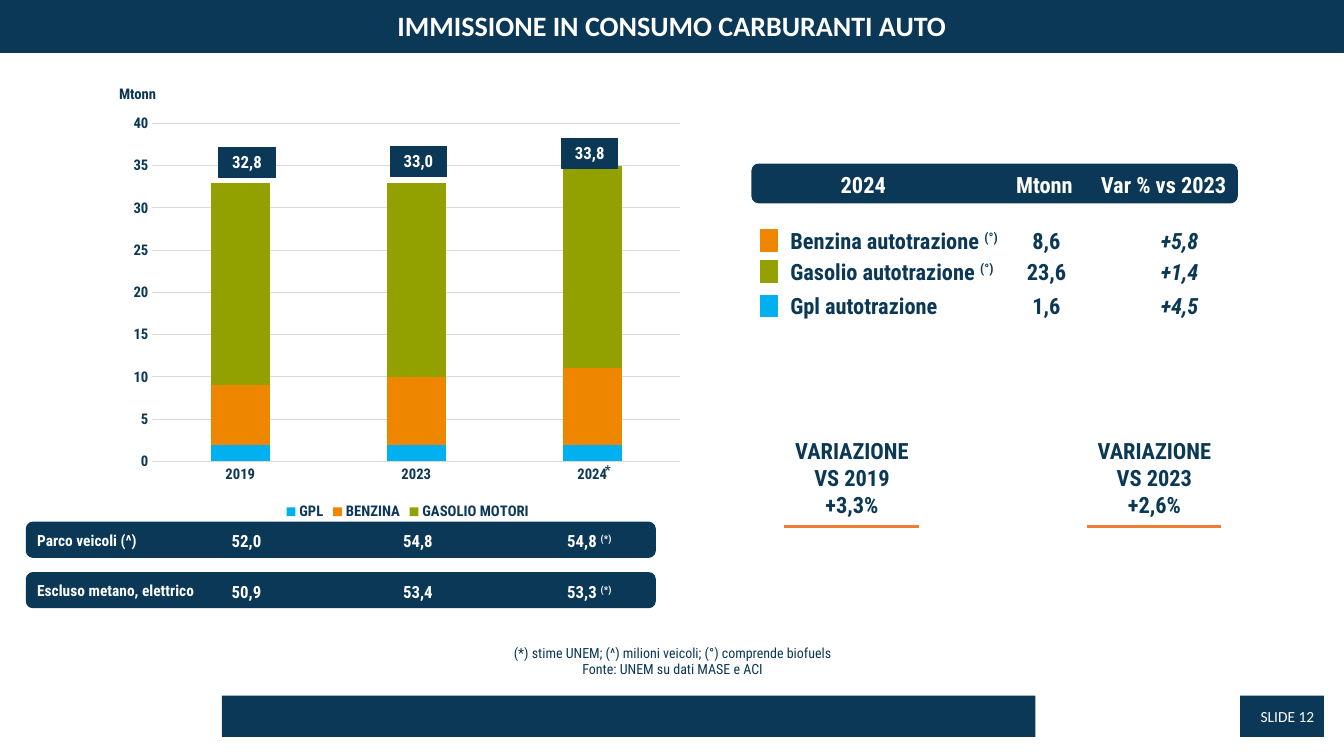
from lxml import etree
from pptx import Presentation
from pptx.chart.data import CategoryChartData
from pptx.dml.color import RGBColor
from pptx.enum.chart import XL_CHART_TYPE as ChartType, XL_LEGEND_POSITION as LegendPosition
from pptx.enum.chart import XL_TICK_MARK as TickMark
from pptx.enum.shapes import MSO_CONNECTOR as Connector, MSO_SHAPE as Shape
from pptx.enum.text import MSO_ANCHOR as Anchor, PP_ALIGN as Align
from pptx.oxml import parse_xml
from pptx.oxml.ns import nsdecls, qn
from pptx.util import Inches, Pt

NAVY, WHITE, GRID, ACCENT = "0B3856", "FFFFFF", "D9D9D9", "ED7D31"
BLUE, ORANGE, GREEN = "00B0F0", "EF8600", "92A000"
BODY, PLAIN = "Roboto Condensed", "Calibri"

TITLE = "IMMISSIONE IN CONSUMO CARBURANTI AUTO"
YEARS = ["2019", "2023", "2024"]
SERIES = [
    ("GPL", BLUE, (2, 2, 2)),
    ("BENZINA", ORANGE, (7, 8, 9)),
    ("GASOLIO MOTORI", GREEN, (24, 23, 24)),
]
TOTALS = [("32,8", 1.46), ("33,0", 1.45), ("33,8", 1.37)]
VEHICLES = [
    ("Parco veicoli (^)", [("52,0", ""), ("54,8", ""), ("54,8 ", "(*)")]),
    ("Escluso metano, elettrico", [("50,9", ""), ("53,4", ""), ("53,3 ", "(*)")]),
]
HEADINGS = [("2024", 8.24, 0.66), ("Mtonn", 9.98, 0.79), ("Var % vs 2023", 10.82, 1.45)]
FUELS = [
    ("Benzina autotrazione ", "(°)", 2.46, "8,6", "+5,8", ORANGE, 2.2),
    ("Gasolio autotrazione ", "(°)", 2.4, "23,6", "+1,4", GREEN, 2.51),
    ("Gpl autotrazione", "", 1.73, "1,6", "+4,5", BLUE, 2.85),
]
CHANGES = [("VS 2019", "+3,3%", 7.78), ("VS 2023", "+2,6%", 10.78)]
NOTES = ["(*) stime UNEM; (^) milioni veicoli; (°) comprende biofuels",
         "Fonte: UNEM su dati MASE e ACI"]

COLUMN_CENTRES = [2.45 + 1.7 * index for index in range(len(YEARS))]

deck = Presentation()
deck.slide_width, deck.slide_height = Inches(13.33), Inches(7.5)
page = deck.slides.add_slide(deck.slide_layouts[6])


def colour(value):
    return RGBColor.from_string(value)


def style(font, size, tint, bold=True, italic=False, name=BODY):
    font.size, font.bold, font.italic, font.name = Pt(size), bold, italic, name
    font.color.rgb = colour(tint)


def write(box, lines, size, tint=NAVY, align=Align.CENTER, raised="", wrap=True, **look):
    frame = box.text_frame
    frame.word_wrap = wrap
    frame.text = "\n".join(lines)
    if raised:
        span = frame.paragraphs[-1].add_run()
        span.text = raised
        span._r.get_or_add_rPr().set("baseline", "30000")
    for para in frame.paragraphs:
        para.alignment = align
        for span in para.runs:
            style(span.font, size, tint, **look)


def label(left, top, width, height, lines, size, **options):
    box = page.shapes.add_textbox(Inches(left), Inches(top), Inches(width), Inches(height))
    write(box, lines, size, **options)


def block(left, top, width, height, fill=NAVY, line=0.75, kind=Shape.RECTANGLE):
    shape = page.shapes.add_shape(kind, Inches(left), Inches(top), Inches(width), Inches(height))
    shape.shadow.inherit = False
    shape.fill.solid()
    shape.fill.fore_color.rgb = colour(fill)
    if line:
        shape.line.color.rgb = colour(fill)
        shape.line.width = Pt(line)
    else:
        shape.line.fill.background()
    return shape


def underline(left, top, width):
    rule = page.shapes.add_connector(
        Connector.STRAIGHT, Inches(left), Inches(top), Inches(left + width), Inches(top))
    rule.line.color.rgb = colour(ACCENT)
    rule.line.width = Pt(2.25)
    etree.SubElement(rule._element.spPr, qn("a:effectLst"))


def add_fuel_chart():
    data = CategoryChartData(number_format="0")
    data.categories = YEARS
    for name, _, values in SERIES:
        data.add_series(name, values)
    chart = page.shapes.add_chart(
        ChartType.COLUMN_STACKED, Inches(1.23), Inches(1.06), Inches(5.63), Inches(4.14), data).chart
    style(chart.font, 10.5, NAVY)
    chart.has_title = False
    chart.has_legend = True
    chart.legend.position = LegendPosition.BOTTOM
    chart.legend.include_in_layout = False
    style(chart.legend.font, 10.5, NAVY)
    plot = chart.plots[0]
    plot.gap_width, plot.overlap, plot.vary_by_categories = 200, 100, False
    for series, (_, tint, _) in zip(plot.series, SERIES):
        series.format.fill.solid()
        series.format.fill.fore_color.rgb = colour(tint)
    for axis in (chart.category_axis, chart.value_axis):
        axis.major_tick_mark = axis.minor_tick_mark = TickMark.NONE
        style(axis.tick_labels.font, 10.5, NAVY)
    scale = chart.value_axis
    scale.minimum_scale, scale.maximum_scale, scale.major_unit = 0, 40, 5
    scale.tick_labels.number_format = "0"
    scale.tick_labels.number_format_is_linked = False
    scale.format.line.fill.background()
    for line in (chart.category_axis.format.line, scale.major_gridlines.format.line):
        line.color.rgb = colour(GRID)
        line.width = Pt(0.75)
    area = chart._chartSpace.chart.plotArea
    for old in area.findall(qn("c:layout")):
        area.remove(old)
    bounds = [("x", 0.05), ("y", 0.04), ("w", 0.93), ("h", 0.81)]
    modes = "".join(f'<c:{key}Mode val="edge"/>' for key in "xy")
    sizes = "".join(f'<c:{key} val="{value}"/>' for key, value in bounds)
    area.insert(0, parse_xml(
        f'<c:layout {nsdecls("c")}><c:manualLayout><c:layoutTarget val="inner"/>'
        f'{modes}{sizes}</c:manualLayout></c:layout>'))


block(12.3, 6.9, 0.83, 0.41, line=0)
block(2.2, 6.9, 8.07, 0.41, line=0)
banner = block(0, -0.02, 13.33, 0.54)
write(banner, [TITLE], 20, WHITE, name=PLAIN)
banner.text_frame.vertical_anchor = Anchor.MIDDLE

add_fuel_chart()
label(0.82, 0.79, 1.09, 0.29, ["Mtonn"], 10.5)
label(5.9, 4.53, 0.27, 0.27, ["*"], 10, align=Align.LEFT, wrap=False, bold=False)
for centre, (total, top) in zip(COLUMN_CENTRES, TOTALS):
    write(block(centre - 0.28, top, 0.56, 0.3), [total], 12, WHITE)

for row, (name, counts) in enumerate(VEHICLES):
    top = 5.19 + 0.5 * row
    block(0.27, top, 6.22, 0.33, line=2, kind=Shape.ROUNDED_RECTANGLE)
    label(0.27, top + 0.03, 1.92, 0.29, [name], 11, tint=WHITE, align=Align.LEFT)
    for centre, (count, mark) in zip(COLUMN_CENTRES, counts):
        label(centre - 0.66, top + 0.03, 1.31, 0.3, [count], 12, tint=WHITE, raised=mark)

block(7.46, 1.63, 4.81, 0.38, line=1, kind=Shape.ROUNDED_RECTANGLE)
for heading, left, width in HEADINGS:
    label(left, 1.65, width, 0.37, [heading], 16, tint=WHITE, align=Align.LEFT, wrap=False)
for name, mark, width, amount, change, tint, top in FUELS:
    block(7.54, top + 0.08, 0.17, 0.21, tint, 1)
    label(7.74, top, width, 0.37, [name], 16, align=Align.LEFT, raised=mark, wrap=False)
    label(10.08, top, 0.6, 0.37, [amount], 16, wrap=False)
    label(11.4, top, 0.6, 0.37, [change], 16, wrap=False, italic=True)

for period, change, left in CHANGES:
    label(left, 4.29, 1.34, 0.91, ["VARIAZIONE", period, change], 16, wrap=False)
    underline(left, 5.22, 1.33)

label(12.21, 6.97, 1.12, 0.29, ["SLIDE 12"], 11, tint=WHITE, bold=False, name=PLAIN)
label(4.62, 6.34, 4.1, 0.44, NOTES, 10, bold=False)

deck.save("out.pptx")
